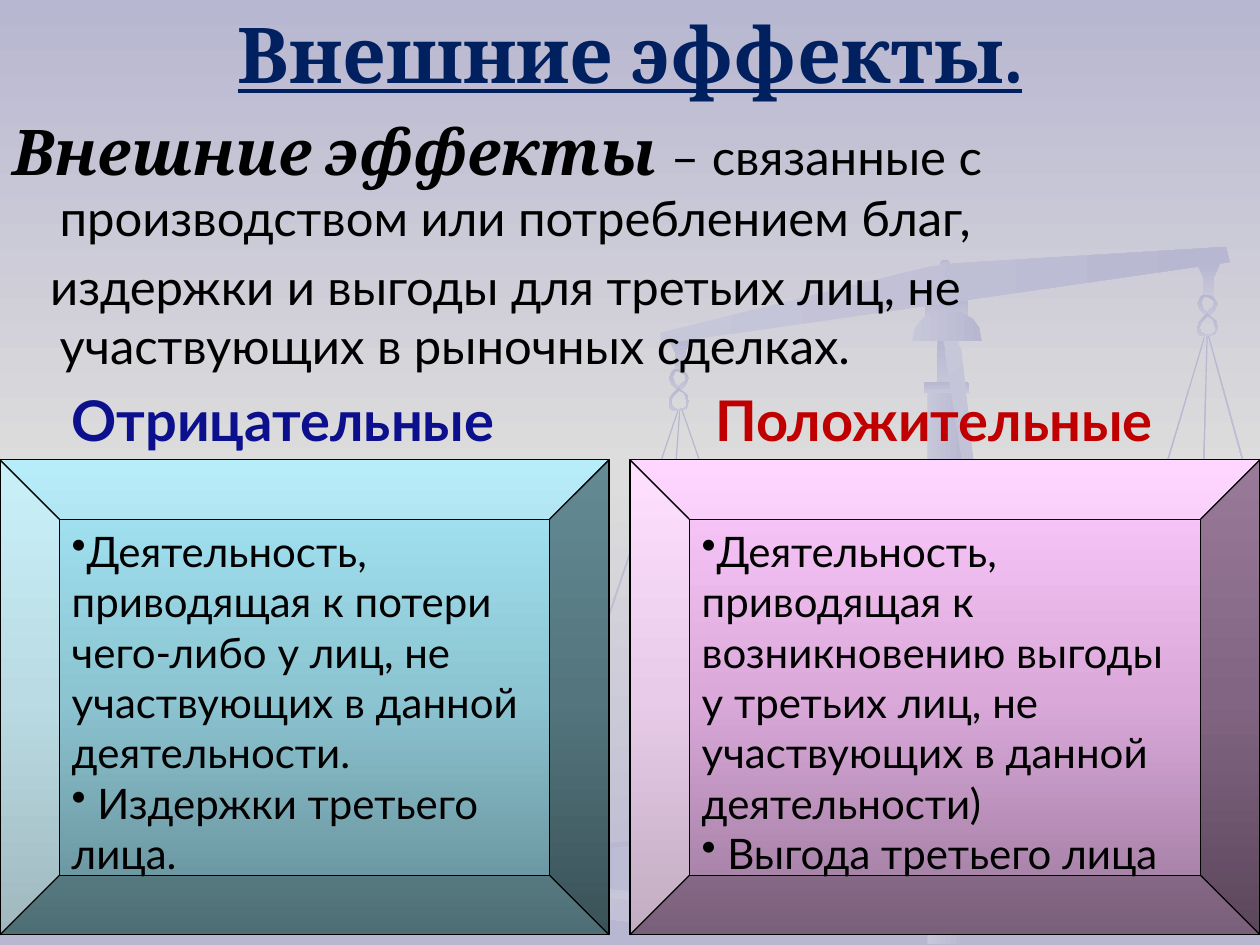
from copy import deepcopy
from dataclasses import dataclass

from pptx import Presentation
from pptx.dml.color import RGBColor
from pptx.enum.shapes import MSO_SHAPE as Preset
from pptx.enum.text import MSO_ANCHOR as Anchor, MSO_AUTO_SIZE as AutoSize, PP_ALIGN as Align
from pptx.oxml.ns import qn
from pptx.oxml.xmlchemy import OxmlElement
from pptx.util import Pt

COLOURS = {
    "lilac": "B8B7D1", "mist": "C7C7DA", "grey": "DDDDDD",
    "navy": "002060", "blue": "0D108D", "red": "C00000", "black": "000000",
    "teal dark": "628A93", "teal": "8CC4D1", "teal light": "A6E8F8",
    "pink dark": "997799", "pink": "DAA9DA", "pink light": "FFCCFF",
}
FADE = ("lilac", "mist")
RISE = ("mist", "lilac")


@dataclass
class Part:
    preset: Preset
    box: tuple
    colours: tuple = FADE
    angle: float = 90
    rotation: float = 0


@dataclass
class Outline:
    contours: list
    colours: tuple = FADE
    angle: float = 90


@dataclass
class Panel:
    left: float
    width: float
    colours: tuple
    items: tuple


@dataclass
class Label:
    left: float
    width: float
    text: str
    colour: str


STRINGS = [
    Part(Preset.RECTANGLE, (left, top, 0.7, height), rotation=rotation)
    for left, top, height, rotation in (
        (650.9, 187.2, 259.2, 16.6), (686.2, 191.5, 249.8, 1.5),
        (704.9, 190.1, 110.2, 344.6), (430.6, 226.8, 254.2, 341),
        (344.9, 227.5, 265, 18.6), (379.4, 234, 238.3, 4.2))
]
BASE = [
    Part(Preset.OVAL, (305.3, 479.5, 172.8, 49), RISE, 45),
    Part(Preset.OVAL, (299.5, 479.5, 187.9, 36)),
    Part(Preset.OVAL, (305.3, 482.4, 177.8, 27.4), FADE, 0),
]
POST = [
    Part(Preset.RECTANGLE, (529.9, 221.8, 21.6, 317.5), RISE, 0),
    Part(Preset.RECTANGLE, (535.7, 193, 9.4, 30.2)),
    Part(Preset.ROUNDED_RECTANGLE, (527.8, 218.2, 25.9, 6.5)),
]
TOP = [
    Part(Preset.RECTANGLE, (528.5, 170.6, 24.5, 13)),
    Part(Preset.OVAL, (537.1, 148.3, 5.8, 5.8)),
]
BEAM = Outline([[(700.6, 141.1), (702.7, 149.8), (378, 196.6), (377.3, 190.1),
                 (530.6, 152.6), (546.5, 150.5)]], RISE, 0)
STRAP = Outline([[(569.5, 388.1), (540, 201.6), (540, 198.7), (538.6, 193),
                  (547.2, 190.8), (547.9, 197.3), (549.4, 199.4)]], RISE, 45)
CAP = Outline([[(541.4, 177.8), (549.4, 178.6), (555.8, 182.2), (559.4, 187.2), (560.9, 195.1),
                (521.3, 195.1), (522.7, 187.2), (527, 182.2), (532.8, 178.6)]], RISE, 0)
CHAIN = [
    Outline([[(13, 0), (0, 1.4), (3.6, 8.6), (3.6, 18.7), (9.4, 18.7), (9.4, 7.9)]]),
    Outline([
        [(5.8, 30.2), (9.4, 27.4), (10.8, 24.5), (11.5, 23), (10.8, 21.6), (8.6, 18.7), (5, 18),
         (2.9, 18), (1.4, 19.4), (0.7, 21.6), (0, 23), (1.4, 26.6), (3.6, 28.8)],
        [(5.8, 19.4), (8.6, 20.9), (9.4, 21.6), (9.4, 24.5), (6.5, 26.6), (5.8, 28.1),
         (3.6, 26.6), (2.9, 24.5), (2.2, 22.3), (3.6, 19.4)]]),
    Outline([
        [(0, 39.6), (1.4, 41), (2.9, 41.8), (6.5, 41.8), (10.1, 40.3), (11.5, 36.7), (10.8, 33.1),
         (8.6, 31), (6.5, 29.5), (5.8, 28.1), (2.9, 31), (0.7, 33.8), (0, 36)],
        [(1.4, 36), (2.2, 33.8), (3.6, 32.4), (5.8, 30.2), (8.6, 31.7), (9.4, 33.8),
         (10.1, 36.7), (10.1, 38.9), (8.6, 40.3), (5, 41), (2.2, 39.6), (1.4, 37.4)]]),
]
CHAIN_PLACES = [(382.3, 193), (684.3, 150.5)]
LABELS = [
    Label(33.8, 280.8, "Отрицательные", "blue"),
    Label(401.8, 293, "Положительные", "red"),
]
PANELS = [
    Panel(0, 348, ("teal dark", "teal", "teal light"), (
        "Деятельность, приводящая к потери чего-либо у лиц, не участвующих в данной деятельности.",
        " Издержки третьего лица.")),
    Panel(360, 360, ("pink dark", "pink", "pink light"), (
        "Деятельность, приводящая к возникновению выгоды у третьих лиц, "
        "не участвующих в данной деятельности)",
        " Выгода третьего лица")),
]


def paint(target, fill, colours: tuple, angle: float) -> None:
    fill.gradient()
    fill.gradient_angle = (360 - angle) % 360
    stops = target.element.find(f".//{qn('a:gsLst')}")
    for _ in colours[2:]:
        stops.append(deepcopy(stops[0]))
    for index, (stop, colour) in enumerate(zip(fill.gradient_stops, colours)):
        stop.position = index / (len(colours) - 1)
        stop.color.rgb = RGBColor.from_string(COLOURS[colour])


def draw_part(page, part: Part):
    shape = page.shapes.add_shape(part.preset, *map(Pt, part.box))
    shape.shadow.inherit = False
    shape.rotation = part.rotation
    paint(shape, shape.fill, part.colours, part.angle)
    shape.line.fill.background()
    return shape


def draw_outline(page, outline: Outline, left: float = 0, top: float = 0) -> None:
    contours = [[(Pt(left + x), Pt(top + y)) for x, y in contour] for contour in outline.contours]
    builder = page.shapes.build_freeform(*contours[0][0])
    builder.add_line_segments(contours[0][1:])
    for contour in contours[1:]:
        builder.move_to(*contour[0])
        builder.add_line_segments(contour[1:])
    shape = builder.convert_to_shape()
    shape.shadow.inherit = False
    paint(shape, shape.fill, outline.colours, outline.angle)
    shape.line.fill.background()


def add_span(para, text: str, size: float, colour: str = "black", font: str = "Lato",
             bold: bool = False, italic: bool = False, underline: bool = False) -> None:
    span = para.add_run()
    span.text = text
    span.font.name = font
    span.font.size = Pt(size)
    span.font.bold = bold
    span.font.italic = italic
    span.font.underline = underline
    span.font.color.rgb = RGBColor.from_string(COLOURS[colour])


def add_frame(page, left: float, top: float, width: float, height: float):
    frame = page.shapes.add_textbox(Pt(left), Pt(top), Pt(width), Pt(height)).text_frame
    frame.word_wrap = True
    return frame


def set_indent(para, margin: float, indent: float) -> None:
    properties = para._p.get_or_add_pPr()
    properties.set("marL", str(Pt(margin)))
    properties.set("indent", str(Pt(indent)))


def draw_scales(page) -> None:
    for part in TOP + STRINGS:
        draw_part(page, part)
    for place in CHAIN_PLACES:
        for link in CHAIN:
            draw_outline(page, link, *place)
    draw_outline(page, BEAM)
    for part in BASE + POST:
        draw_part(page, part)
    draw_outline(page, STRAP)
    draw_outline(page, CAP)


def draw_heading(page) -> None:
    title = add_frame(page, 36, 0, 648, 60.5)
    title.vertical_anchor = Anchor.MIDDLE
    title.paragraphs[0].alignment = Align.CENTER
    add_span(title.paragraphs[0], "Внешние эффекты.", 44, "navy", "Cambria",
             bold=True, underline=True)

    body = add_frame(page, 0, 60.5, 720, 147.6)
    first, second = body.paragraphs[0], body.add_paragraph()
    set_indent(first, 27, -27)
    add_span(first, "Внешние эффекты ", 36, font="Cambria", bold=True, italic=True)
    add_span(first, "– связанные с производством или потреблением благ,", 28)
    set_indent(second, 27, -5.4)
    second.space_before = Pt(5.6)
    add_span(second, "издержки и выгоды для третьих лиц, не участвующих в рыночных сделках.", 28)


def draw_label(page, label: Label) -> None:
    frame = add_frame(page, label.left, 216.7, label.width, 46)
    frame.word_wrap = False
    frame.auto_size = AutoSize.SHAPE_TO_FIT_TEXT
    add_span(frame.paragraphs[0], label.text, 32, label.colour, bold=True)


def draw_panel(page, panel: Panel) -> None:
    shape = draw_part(page, Part(Preset.BEVEL, (panel.left, 262.8, panel.width, 271.4),
                                 panel.colours, 270))
    shape.line.color.rgb = RGBColor.from_string(COLOURS["black"])
    shape.line.width = Pt(0.75)
    frame = shape.text_frame
    frame.word_wrap = True
    frame.vertical_anchor = Anchor.TOP
    for index, item in enumerate(panel.items):
        para = frame.add_paragraph() if index else frame.paragraphs[0]
        para.alignment = Align.LEFT
        set_indent(para, 0, 0)
        bullet = OxmlElement("a:buChar")
        bullet.set("char", "•")
        para._p.get_or_add_pPr().append(bullet)
        add_span(para, item, 24)


def main() -> None:
    deck = Presentation()
    deck.slide_width, deck.slide_height = Pt(720), Pt(540)
    page = deck.slides.add_slide(deck.slide_layouts[6])
    paint(page, page.background.fill, ("lilac", "grey", "lilac"), 90)
    draw_scales(page)
    draw_heading(page)
    for label in LABELS:
        draw_label(page, label)
    for panel in PANELS:
        draw_panel(page, panel)
    deck.save("out.pptx")


if __name__ == "__main__":
    main()
